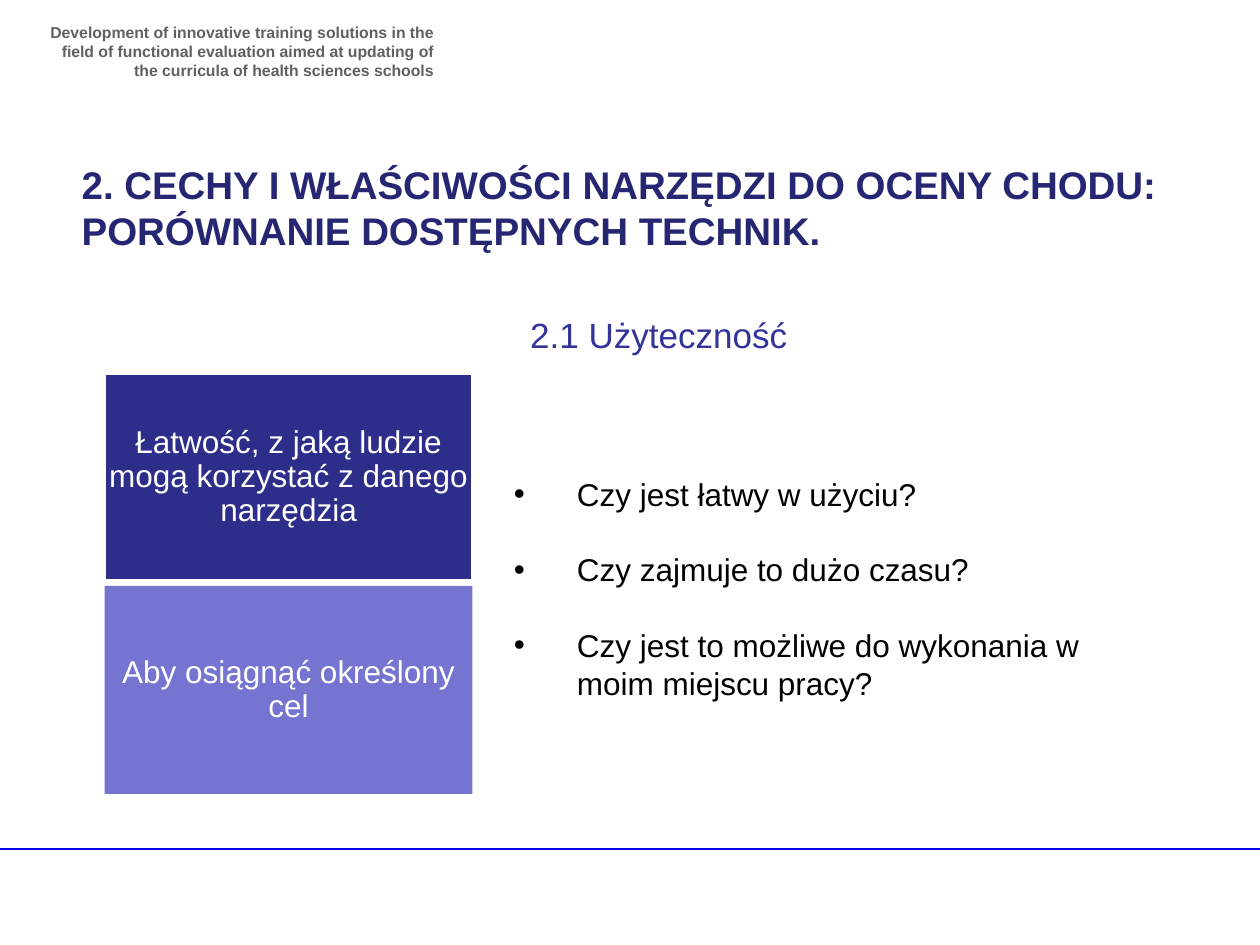
from dataclasses import dataclass
from typing import Any

from lxml.etree import SubElement
from pptx import Presentation
from pptx.dml.color import RGBColor
from pptx.enum.shapes import MSO_CONNECTOR, MSO_SHAPE
from pptx.enum.text import MSO_ANCHOR, PP_ALIGN
from pptx.oxml.ns import qn
from pptx.util import Inches, Pt

WIDTH, HEIGHT = 10, 7.5
COLUMNS, ROWS = 100, 75


def color(code):
    """Turn a hex string into a colour."""
    return RGBColor.from_string(code)


@dataclass
class SlideBuilder:
    """Draw styled elements on one slide, measured in grid columns and rows."""

    page: Any
    font: str = "Arial"
    body_size: float = 18
    white: str = "FFFFFF"

    def across(self, columns):
        """Convert grid columns to a length."""
        return Inches(WIDTH * columns / COLUMNS)

    def down(self, rows):
        """Convert grid rows to a length."""
        return Inches(HEIGHT * rows / ROWS)

    def area(self, left, top, width, height):
        """Convert a grid area to slide lengths."""
        return self.across(left), self.down(top), self.across(width), self.down(height)

    def style(self, para, size, code, bold=False):
        """Format every run of a paragraph."""
        for span in para.runs:
            span.font.name = self.font
            span.font.size = Pt(size)
            span.font.bold = bold
            span.font.color.rgb = color(code)

    def text(self, area, words, size, code, bold=False, align=PP_ALIGN.LEFT):
        """Add a wrapped text box with one paragraph."""
        frame = self.page.shapes.add_textbox(*self.area(*area)).text_frame
        frame.word_wrap = True
        frame.text = words
        para = frame.paragraphs[0]
        para.alignment = align
        self.style(para, size, code, bold)

    def block(self, area, words, fill, outlined):
        """Add a filled rectangle with centred text."""
        box = self.page.shapes.add_shape(MSO_SHAPE.RECTANGLE, *self.area(*area))
        box.shadow.inherit = False
        box.fill.solid()
        box.fill.fore_color.rgb = color(fill)
        if outlined:
            box.line.color.rgb = color(self.white)
            box.line.width = Pt(2)
        else:
            box.line.fill.background()
        frame = box.text_frame
        frame.word_wrap = True
        frame.vertical_anchor = MSO_ANCHOR.MIDDLE
        frame.margin_left = frame.margin_right = Inches(0.01)
        frame.margin_top = frame.margin_bottom = Inches(0.01)
        frame.text = words
        para = frame.paragraphs[0]
        para.alignment = PP_ALIGN.CENTER
        para.line_spacing = 0.9
        self.style(para, self.body_size, self.white)

    def bullets(self, area, items, code, indent, gap):
        """Add a bulleted list with even gaps between its items."""
        frame = self.page.shapes.add_textbox(*self.area(*area)).text_frame
        frame.word_wrap = True
        frame.text = "\n".join(items)
        for index, para in enumerate(frame.paragraphs):
            properties = para._p.get_or_add_pPr()
            properties.set("marL", str(self.across(indent)))
            properties.set("indent", str(-self.across(indent)))
            SubElement(properties, qn("a:buFont"), typeface=self.font)
            SubElement(properties, qn("a:buChar"), char="•")
            if index:
                para.space_before = Pt(gap)
            self.style(para, self.body_size, code)

    def rule(self, start, end, row, code):
        """Add a thin horizontal line."""
        line = self.page.shapes.add_connector(
            MSO_CONNECTOR.STRAIGHT,
            self.across(start), self.down(row), self.across(end), self.down(row),
        )
        line.line.color.rgb = color(code)
        line.line.width = Pt(1)
        SubElement(line._element.spPr, qn("a:effectLst"))


def main():
    """Build the usability slide."""
    deck = Presentation()
    deck.slide_width, deck.slide_height = Inches(WIDTH), Inches(HEIGHT)
    builder = SlideBuilder(deck.slides.add_slide(deck.slide_layouts[6]))

    builder.rule(-0.5, COLUMNS, 67.4, "0404E6")
    builder.text(
        (2.8, 1.3, 32.6, 4.7),
        "Development of innovative training solutions in the ﬁeld of functional "
        "evaluation aimed at updating of the curricula of health sciences schools",
        9, "606060", bold=True, align=PP_ALIGN.RIGHT,
    )
    builder.text(
        (5.5, 12.3, 90.9, 8.4),
        "2. CECHY I WŁAŚCIWOŚCI NARZĘDZI DO OCENY CHODU: "
        "PORÓWNANIE DOSTĘPNYCH TECHNIK.",
        22, "262673", bold=True,
    )
    builder.text((41.1, 24.4, 29.3, 7.7), "2.1 Użyteczność", 20, "333399")

    blocks = [
        ("Łatwość, z jaką ludzie mogą korzystać z danego narzędzia", "2D2D8A", True),
        ("Aby osiągnąć określony cel", "7575D1", False),
    ]
    for index, (words, fill, outlined) in enumerate(blocks):
        builder.block((8.3, 29.6 + index * 16.9, 29.2, 16.5), words, fill, outlined)

    questions = [
        "Czy jest łatwy w użyciu?",
        "Czy zajmuje to dużo czasu?",
        "Czy jest to możliwe do wykonania w moim miejscu pracy?",
    ]
    builder.bullets((39.8, 37.2, 52.8, 22.2), questions, "000000", indent=5, gap=21.5)

    deck.save("out.pptx")


if __name__ == "__main__":
    main()
